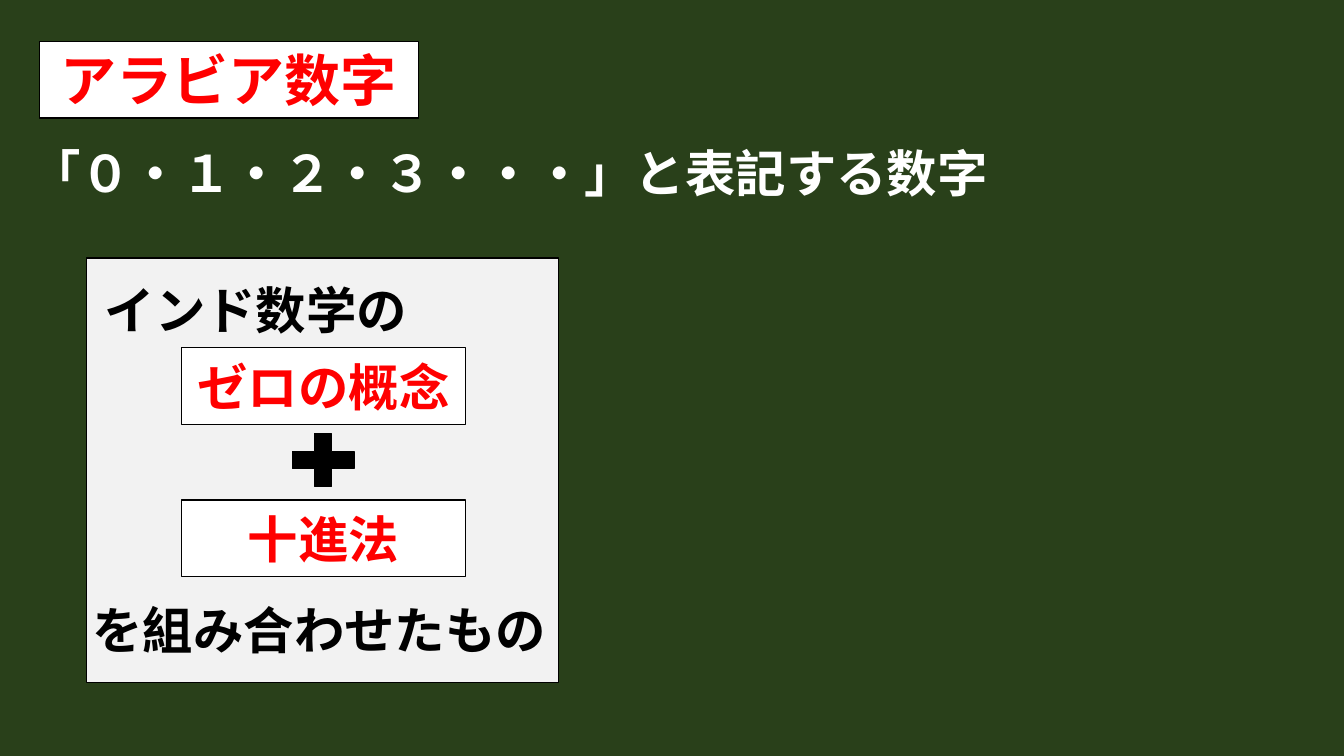
from lxml.etree import SubElement
from pptx import Presentation
from pptx.dml.color import RGBColor
from pptx.enum.shapes import MSO_SHAPE
from pptx.enum.text import MSO_ANCHOR, MSO_AUTO_SIZE, PP_ALIGN
from pptx.oxml.ns import qn
from pptx.util import Pt

FONT = "Noto Sans CJK JP"
COLORS = {
    "board": "29401A",
    "panel": "F2F2F2",
    "white": "FFFFFF",
    "black": "000000",
    "red": "FF0000",
}
TERM_LEFT, TERM_WIDTH, TERM_HEIGHT = 129.6, 203, 54.7
LINE_HEIGHT = 51.1


def rgb(name):
    return RGBColor.from_string(COLORS[name])


def write(sp, text, color, size=36, align=PP_ALIGN.LEFT, anchor=MSO_ANCHOR.TOP):
    tf = sp.text_frame
    tf.text = text
    tf.word_wrap = True
    tf.auto_size = MSO_AUTO_SIZE.NONE
    tf.vertical_anchor = anchor
    p = tf.paragraphs[0]
    p.alignment = align
    r = p.runs[0]
    r.font.size = Pt(size)
    r.font.bold = True
    r.font.color.rgb = rgb(color)
    r.font.name = FONT
    # East Asian glyphs take their font from a:ea
    SubElement(r.font._element, qn("a:ea"), typeface=FONT)


def paint(sp, fill):
    """Give a shape a solid fill and a thin black outline."""
    sp.fill.solid()
    sp.fill.fore_color.rgb = rgb(fill)
    sp.line.color.rgb = rgb("black")
    sp.line.width = Pt(1)


def add_figure(s, kind, left, top, width, height, fill):
    sp = s.shapes.add_shape(kind, Pt(left), Pt(top), Pt(width), Pt(height))
    sp.shadow.inherit = False
    paint(sp, fill)
    return sp


def add_line_of_text(s, text, left, top, width, color):
    sp = s.shapes.add_textbox(Pt(left), Pt(top), Pt(width), Pt(LINE_HEIGHT))
    write(sp, text, color)


def add_term(s, text, top):
    sp = add_figure(s, MSO_SHAPE.RECTANGLE, TERM_LEFT, top,
                    TERM_WIDTH, TERM_HEIGHT, "white")
    write(sp, text, "red", align=PP_ALIGN.CENTER, anchor=MSO_ANCHOR.MIDDLE)


def set_title(s, text):
    sp = s.shapes.title
    sp.left, sp.top, sp.width, sp.height = Pt(28.1), Pt(29.5), Pt(270.7), Pt(TERM_HEIGHT)
    paint(sp, "white")
    write(sp, text, "red", size=40, align=PP_ALIGN.CENTER, anchor=MSO_ANCHOR.MIDDLE)


def main():
    prs = Presentation()
    prs.slide_width, prs.slide_height = Pt(960), Pt(540)
    s = prs.slides.add_slide(prs.slide_layouts.get_by_name("Title Only"))
    s.background.fill.solid()
    s.background.fill.fore_color.rgb = rgb("board")

    set_title(s, "アラビア数字")
    add_line_of_text(s, "「０・１・２・３・・・」と表記する数字", 14.4, 97.9, 769, "white")

    add_figure(s, MSO_SHAPE.RECTANGLE, 61.9, 184.3, 337, 303.1, "panel")
    add_line_of_text(s, "インド数学の", 67.7, 195.8, 239.8, "black")
    add_term(s, "ゼロの概念", 248.4)
    add_figure(s, MSO_SHAPE.MATH_PLUS, 200.9, 303.1, 59.8, LINE_HEIGHT, "black")
    add_term(s, "十進法", 357.1)
    add_line_of_text(s, "を組み合わせたもの", 59, 424.1, 342.7, "black")

    prs.save("out.pptx")


if __name__ == "__main__":
    main()
